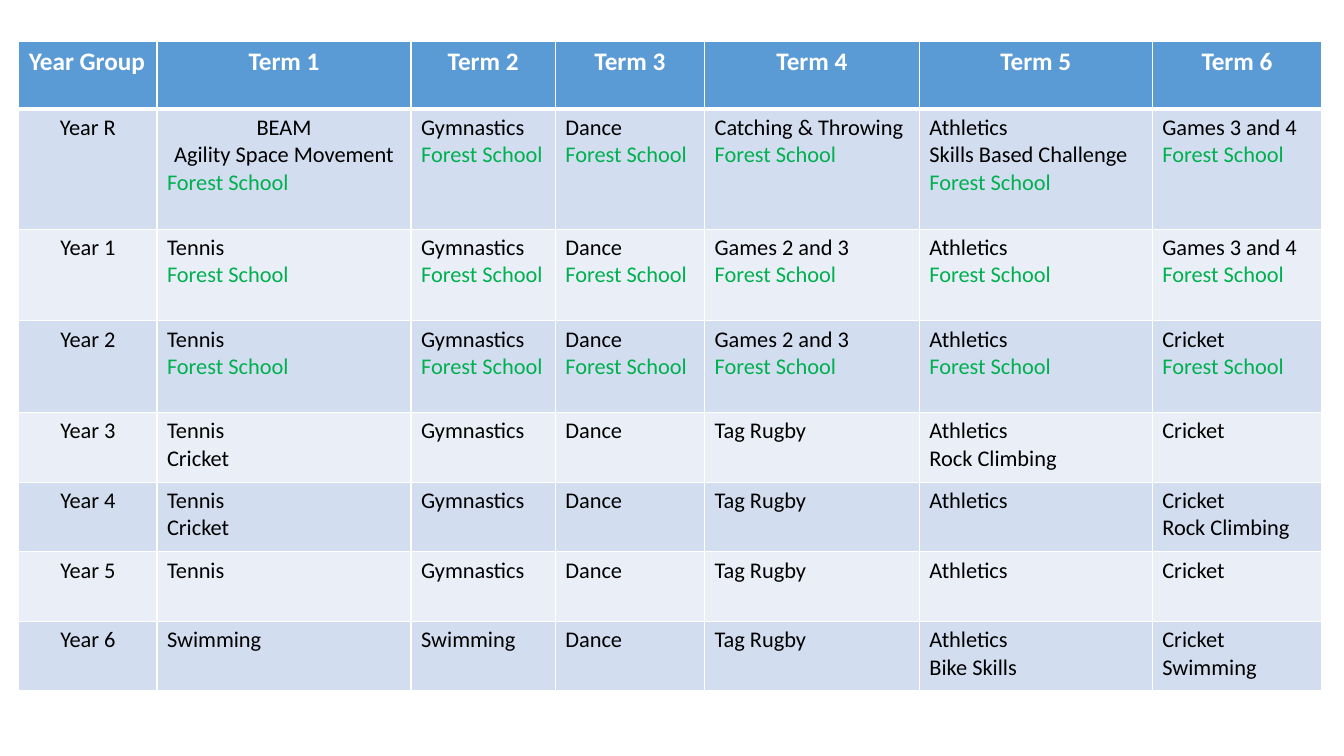
from collections import namedtuple
from dataclasses import dataclass

from lxml.etree import SubElement
from pptx import Presentation
from pptx.dml.color import RGBColor as Color
from pptx.enum.text import PP_ALIGN as Align
from pptx.oxml.ns import qn
from pptx.util import Inches, Pt

Box = namedtuple("Box", "left top width height")


@dataclass(frozen=True)
class Theme:
    font: str = "Calibri"
    header_size: int = 18
    body_size: int = 16
    header_text: str = "FFFFFF"
    body_text: str = "000000"
    forest_text: str = "00B050"
    header_fill: str = "5B9BD5"
    band_fills: tuple = ("D2DEEF", "EAEFF7")
    rule: str = "FFFFFF"
    thin_rule: float = 1
    header_rule: float = 3


THEME = Theme()
FOREST = "Forest School"
COLUMN_SHARES = (1.37, 2.52, 1.43, 1.48, 2.13, 2.31, 1.68)
ROW_SHARES = (0.67, 1.19, 0.91, 0.91, 0.69, 0.69, 0.69, 0.69)
HEADINGS = ("Year Group", *(f"Term {term}" for term in range(1, 7)))
FOREST_YEARS = ("Year R", "Year 1", "Year 2")
CENTRED = ("BEAM", "Agility Space Movement")
ACTIVITIES = {
    "Year R": ("BEAM\nAgility Space Movement", "Gymnastics", "Dance", "Catching & Throwing",
               "Athletics\nSkills Based Challenge", "Games 3 and 4"),
    "Year 1": ("Tennis", "Gymnastics", "Dance", "Games 2 and 3", "Athletics", "Games 3 and 4"),
    "Year 2": ("Tennis", "Gymnastics", "Dance", "Games 2 and 3", "Athletics", "Cricket"),
    "Year 3": ("Tennis\nCricket", "Gymnastics", "Dance", "Tag Rugby",
               "Athletics\nRock Climbing", "Cricket"),
    "Year 4": ("Tennis\nCricket", "Gymnastics", "Dance", "Tag Rugby",
               "Athletics", "Cricket\nRock Climbing"),
    "Year 5": ("Tennis", "Gymnastics", "Dance", "Tag Rugby", "Athletics", "Cricket"),
    "Year 6": ("Swimming", "Swimming", "Dance", "Tag Rugby",
               "Athletics\nBike Skills", "Cricket\nSwimming"),
}


def rule_cell(cell, top, bottom):
    """Draw the four borders; top and bottom are widths in points."""
    properties = cell._tc.get_or_add_tcPr()
    widths = {"lnL": THEME.thin_rule, "lnR": THEME.thin_rule, "lnT": top, "lnB": bottom}
    for side, width in widths.items():
        line = SubElement(properties, qn(f"a:{side}"), w=str(Pt(width)))
        SubElement(SubElement(line, qn("a:solidFill")), qn("a:srgbClr"), val=THEME.rule)


def fill_cell(cell, colour):
    cell.fill.solid()
    cell.fill.fore_color.rgb = Color.from_string(colour)


def write_line(paragraph, text, colour, centred, **font_format):
    paragraph.text = text
    paragraph.alignment = Align.CENTER if centred else Align.LEFT
    for name, value in {"name": THEME.font, **font_format}.items():
        setattr(paragraph.runs[0].font, name, value)
    paragraph.runs[0].font.color.rgb = Color.from_string(colour)


def write_header(cells):
    for column, (cell, heading) in enumerate(zip(cells, HEADINGS)):
        rule_cell(cell, THEME.thin_rule, THEME.header_rule)
        fill_cell(cell, THEME.header_fill)
        write_line(cell.text_frame.paragraphs[0], heading, THEME.header_text,
                   column > 0, size=Pt(THEME.header_size), bold=True)


def write_year(cells, year, activities, fill, top_rule):
    for column, (cell, entry) in enumerate(zip(cells, (year, *activities))):
        rule_cell(cell, top_rule, THEME.thin_rule)
        fill_cell(cell, fill)
        lines = entry.split("\n")
        if column > 0 and year in FOREST_YEARS:
            lines.append(FOREST)
        frame = cell.text_frame
        for index, line in enumerate(lines):
            paragraph = frame.add_paragraph() if index else frame.paragraphs[0]
            colour = THEME.forest_text if line == FOREST else THEME.body_text
            write_line(paragraph, line, colour, column == 0 or line in CENTRED,
                       size=Pt(THEME.body_size), bold=False)


def add_curriculum(slide, box):
    table = slide.shapes.add_table(len(ROW_SHARES), len(COLUMN_SHARES), *box).table
    for column, share in zip(table.columns, COLUMN_SHARES):
        column.width = int(box.width * share / sum(COLUMN_SHARES))
    for row, share in zip(table.rows, ROW_SHARES):
        row.height = int(box.height * share / sum(ROW_SHARES))
    header, *year_rows = table.rows
    write_header(header.cells)
    for index, (row, (year, activities)) in enumerate(zip(year_rows, ACTIVITIES.items())):
        fill = THEME.band_fills[index % len(THEME.band_fills)]
        top_rule = THEME.thin_rule if index else THEME.header_rule
        write_year(row.cells, year, activities, fill, top_rule)


def main():
    deck = Presentation()
    deck.slide_width, deck.slide_height = Inches(13.33), Inches(7.5)
    slide = deck.slides.add_slide(deck.slide_layouts[6])
    percent_x, percent_y = deck.slide_width / 100, deck.slide_height / 100
    add_curriculum(slide, Box(int(1.4 * percent_x), int(5.5 * percent_y),
                              int(96.95 * percent_x), int(85.9 * percent_y)))
    deck.save("out.pptx")


if __name__ == "__main__":
    main()
